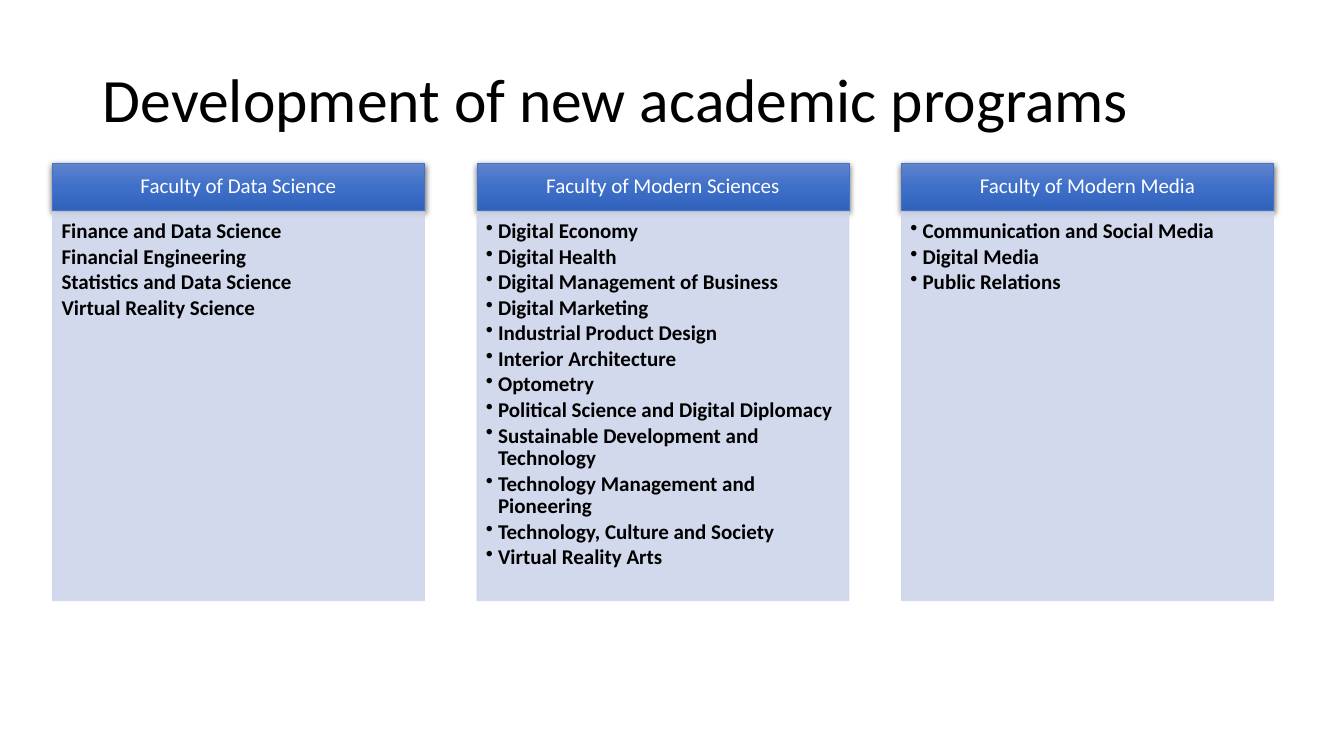
from copy import deepcopy
from lxml.etree import SubElement
from pptx import Presentation
from pptx.dml.color import RGBColor
from pptx.enum.shapes import MSO_SHAPE
from pptx.enum.text import MSO_ANCHOR, MSO_AUTO_SIZE, PP_ALIGN
from pptx.oxml.ns import qn
from pptx.util import Inches, Pt

TITLE = "Development of new academic programs"
# heading, bullet mark, programs
COLS = [
    ("Faculty of Data Science", None, [
        "Finance and Data Science",
        "Financial Engineering",
        "Statistics and Data Science",
        "Virtual Reality Science",
    ]),
    ("Faculty of Modern Sciences", "•", [
        "Digital Economy",
        "Digital Health",
        "Digital Management of Business",
        "Digital Marketing",
        "Industrial Product Design",
        "Interior Architecture",
        "Optometry",
        "Political Science and Digital Diplomacy",
        "Sustainable Development and Technology",
        "Technology Management and Pioneering",
        "Technology, Culture and Society",
        "Virtual Reality Arts",
    ]),
    ("Faculty of Modern Media", "•", [
        "Communication and Social Media",
        "Digital Media",
        "Public Relations",
    ]),
]
GRAD = [(0, "6183CB"), (0.5, "3E70CA"), (1, "3062BB")]
LEFT, STEP, WIDE = 0.52, 4.21, 3.69
HEAD_TOP, HEAD_H = 1.62, 0.47
BODY_TOP, BODY_H = 2.1, 3.86
INDENT = 0.12


def color(code):
    return RGBColor.from_string(code)


def assign(obj, fmt):
    for name, val in fmt.items():
        setattr(obj, name, val)


def style(para, size, code, bold, fmt):
    assign(para, {"line_spacing": 0.9, **fmt})
    assign(para.font, {"name": "Calibri", "size": Pt(size), "bold": bold})
    para.font.color.rgb = color(code)


def margins(*sides):
    names = ("margin_left", "margin_top", "margin_right", "margin_bottom")
    return dict(zip(names, map(Inches, sides)))


def add_rect(slide, left, top, high, edge):
    rect = slide.shapes.add_shape(
        MSO_SHAPE.RECTANGLE, *map(Inches, (left, top, WIDE, high)))
    rect.line.color.rgb = color(edge)
    rect.line.width = Pt(0.5)
    rect.shadow.inherit = False
    rect.text_frame.word_wrap = True
    return rect


def add_alpha(node, share):
    SubElement(node, qn("a:alpha"), val=str(share * 1000))


def add_head(slide, left, text):
    rect = add_rect(slide, left, HEAD_TOP, HEAD_H, "4472C4")
    props = rect._element.spPr
    rect.fill.gradient()
    rect.fill.gradient_angle = 270
    stops = props.find(".//" + qn("a:gsLst"))
    stops.insert(1, deepcopy(stops[0]))
    for stop, (pos, code) in zip(rect.fill.gradient_stops, GRAD):
        stop.position = pos
        stop.color.rgb = color(code)
    shade = SubElement(
        props.find(qn("a:effectLst")), qn("a:outerShdw"), blurRad=str(Pt(4.5)),
        dist=str(Pt(1.5)), dir="5400000", algn="ctr", rotWithShape="0")
    add_alpha(SubElement(shade, qn("a:srgbClr"), val="000000"), 63)
    frame = rect.text_frame
    assign(frame, {"vertical_anchor": MSO_ANCHOR.MIDDLE,
                   **margins(0.12, 0.07, 0.12, 0.07)})
    frame.text = text
    style(frame.paragraphs[0], 15, "FFFFFF", False,
          {"alignment": PP_ALIGN.CENTER})


def add_body(slide, left, mark, items):
    rect = add_rect(slide, left, BODY_TOP, BODY_H, "CFD5EA")
    rect.fill.solid()
    rect.fill.fore_color.rgb = color("CFD5EA")
    for node in rect._element.spPr.iter(qn("a:srgbClr")):
        add_alpha(node, 90)
    frame = rect.text_frame
    assign(frame, {"vertical_anchor": MSO_ANCHOR.TOP,
                   **margins(0.09, 0.09, 0.12, 0.13)})
    frame.text = "\n".join(items)
    for para in frame.paragraphs:
        props = para._p.get_or_add_pPr()
        props.set("marL", str(Inches(INDENT)))
        props.set("indent", str(-Inches(INDENT)))
        if mark:
            SubElement(props, qn("a:buChar"), char=mark)
        else:
            SubElement(props, qn("a:buNone"))
        style(para, 15, "000000", True,
              {"alignment": PP_ALIGN.LEFT, "space_after": Pt(2)})


def main():
    deck = Presentation()
    assign(deck, {"slide_width": Inches(13.33), "slide_height": Inches(7.5)})
    slide = deck.slides.add_slide(deck.slide_layouts[5])
    title = slide.shapes.title
    assign(title, {"left": Inches(0.92), "top": Inches(0.4),
                   "width": Inches(11.5), "height": Inches(1)})
    assign(title.text_frame, {"text": TITLE, "word_wrap": True,
                              "auto_size": MSO_AUTO_SIZE.NONE,
                              "vertical_anchor": MSO_ANCHOR.BOTTOM})
    style(title.text_frame.paragraphs[0], 44, "000000", False,
          {"alignment": PP_ALIGN.LEFT})
    for num, (head, mark, items) in enumerate(COLS):
        left = LEFT + num * STEP
        add_head(slide, left, head)
        add_body(slide, left, mark, items)
    deck.save("out.pptx")


if __name__ == "__main__":
    main()
